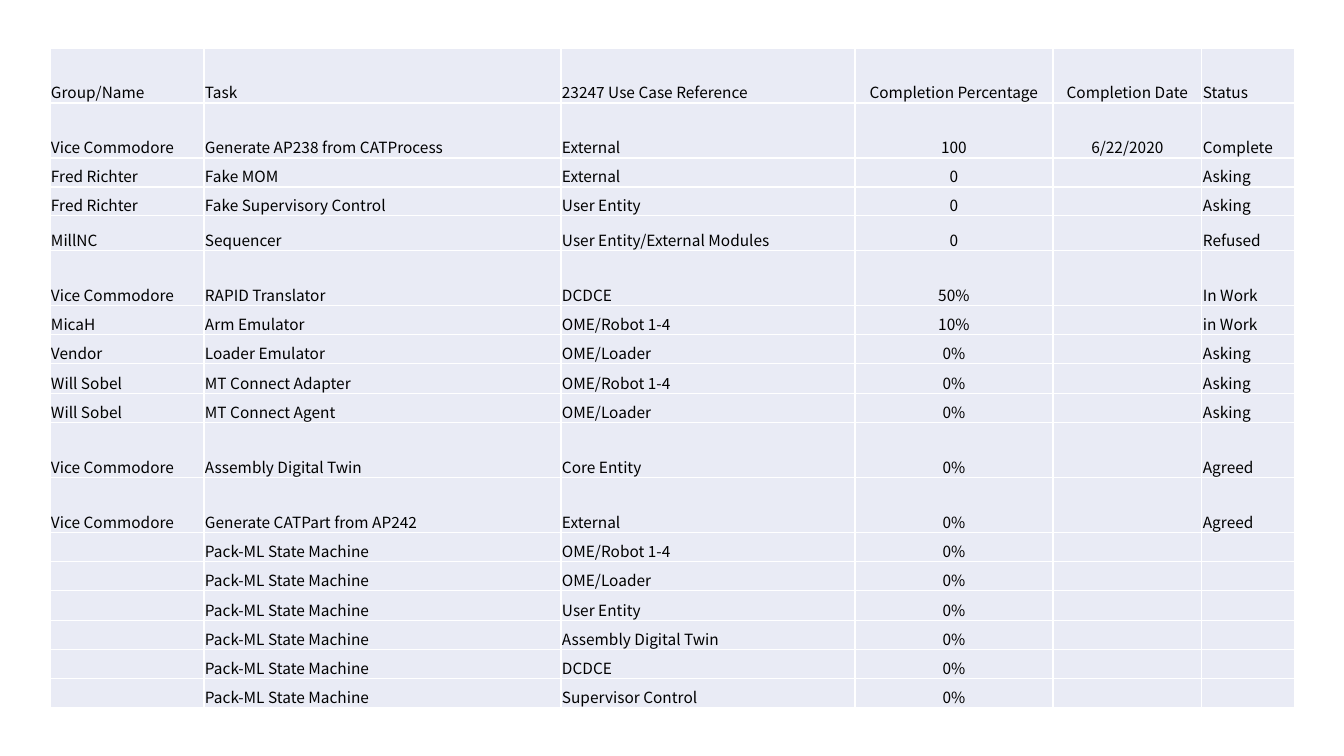
from itertools import pairwise

from lxml import etree
from pptx import Presentation
from pptx.dml.color import RGBColor
from pptx.enum.text import MSO_ANCHOR, PP_ALIGN
from pptx.oxml.ns import qn
from pptx.util import Pt

BOTTOM = MSO_ANCHOR.BOTTOM
LEFT, CENTER = PP_ALIGN.LEFT, PP_ALIGN.CENTER
FONT = "Noto Sans CJK KR"
SIZE = 11
INK, PALE, WHITE = "000000", "E9EBF5", "FFFFFF"


def px(n):
    return round(n * 914400 / 100.8)


def border(cell, color):
    props = cell._tc.get_or_add_tcPr()
    for side in ("lnL", "lnR", "lnT", "lnB"):
        line = etree.SubElement(props, qn("a:" + side), w=str(Pt(1)))
        fill = etree.SubElement(line, qn("a:solidFill"))
        etree.SubElement(fill, qn("a:srgbClr"), val=color)


rows = [
    ("Group/Name", "Task", "23247 Use Case Reference",
     "Completion Percentage", "Completion Date", "Status"),
    ("Vice Commodore", "Generate AP238 from CATProcess", "External",
     "100", "6/22/2020", "Complete"),
    ("Fred Richter", "Fake MOM", "External", "0", "", "Asking"),
    ("Fred Richter", "Fake Supervisory Control", "User Entity", "0", "", "Asking"),
    ("MillNC", "Sequencer", "User Entity/External Modules", "0", "", "Refused"),
    ("Vice Commodore", "RAPID Translator", "DCDCE", "50%", "", "In Work"),
    ("MicaH", "Arm Emulator", "OME/Robot 1-4", "10%", "", "in Work"),
    ("Vendor", "Loader Emulator", "OME/Loader", "0%", "", "Asking"),
    ("Will Sobel", "MT Connect Adapter", "OME/Robot 1-4", "0%", "", "Asking"),
    ("Will Sobel", "MT Connect Agent", "OME/Loader", "0%", "", "Asking"),
    ("Vice Commodore", "Assembly Digital Twin", "Core Entity", "0%", "", "Agreed"),
    ("Vice Commodore", "Generate CATPart from AP242", "External", "0%", "", "Agreed"),
]
for entity in ("OME/Robot 1-4", "OME/Loader", "User Entity",
               "Assembly Digital Twin", "DCDCE", "Supervisor Control"):
    rows.append(("", "Pack-ML State Machine", entity, "0%", "", ""))

col_edges = [50, 204, 561, 855, 1053, 1202, 1295]
row_edges = [48, 103, 158, 187, 216, 251, 306, 335, 364, 394,
             423, 478, 533, 562, 591, 621, 650, 679, 708]
aligns = [LEFT, LEFT, LEFT, CENTER, CENTER, LEFT]

prs = Presentation()
prs.slide_width, prs.slide_height = px(1344), px(756)
slide = prs.slides.add_slide(prs.slide_layouts[6])

left, top = col_edges[0], row_edges[0]
table = slide.shapes.add_table(
    len(rows), len(aligns), px(left), px(top),
    px(col_edges[-1] - left), px(row_edges[-1] - top)).table
table.first_row = table.horz_banding = False
for col, (start, end) in zip(table.columns, pairwise(col_edges)):
    col.width = px(end - start)
for row, (start, end) in zip(table.rows, pairwise(row_edges)):
    row.height = px(end - start)

for r, texts in enumerate(rows):
    for c, text in enumerate(texts):
        cell = table.cell(r, c)
        cell.margin_left = cell.margin_right = cell.margin_top = px(1)
        cell.margin_bottom = 0
        cell.vertical_anchor = BOTTOM
        border(cell, WHITE)
        cell.fill.solid()
        cell.fill.fore_color.rgb = RGBColor.from_string(PALE)
        para = cell.text_frame.paragraphs[0]
        para.alignment = aligns[c]
        if text:
            run = para.add_run()
            run.text = text
            run.font.name = FONT
            run.font.size = Pt(SIZE)
            run.font.color.rgb = RGBColor.from_string(INK)
        else:
            # An empty cell at the default size would stretch its row
            etree.SubElement(para._p, qn("a:endParaRPr"), sz=str(SIZE * 100))

prs.save("out.pptx")
